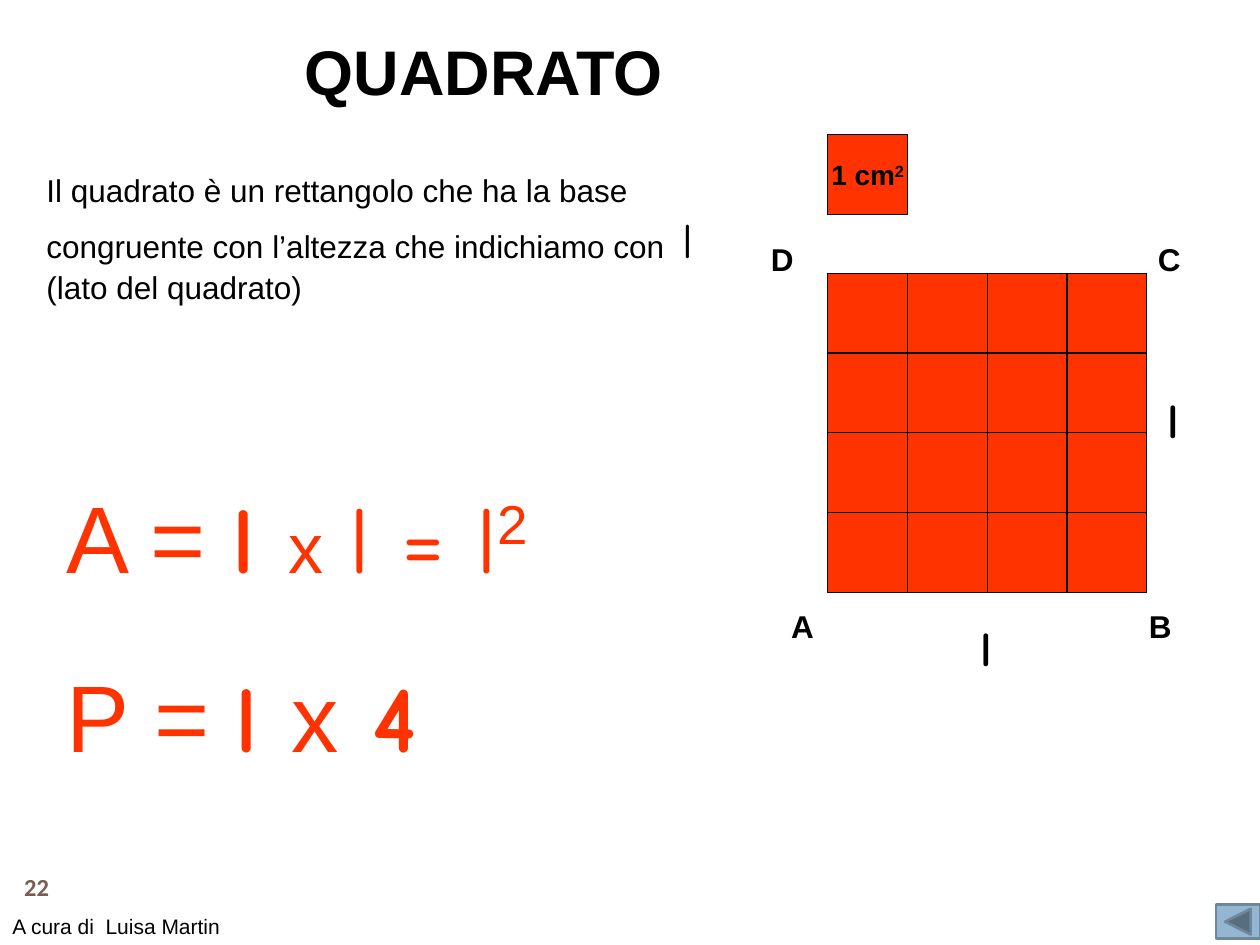
import dataclasses

import pptx
import pptx.dml.color
import pptx.enum.shapes
import pptx.enum.text
import pptx.oxml
import pptx.util
from pptx.util import Inches

SHAPE = pptx.enum.shapes.MSO_SHAPE
ANCHOR = pptx.enum.text.MSO_ANCHOR
ALIGN = pptx.enum.text.PP_ALIGN


@dataclasses.dataclass(frozen=True)
class Theme:
    black: str = "000000"
    red: str = "FF3300"
    brown: str = "775F55"
    button: str = "94B6D2"
    button_edge: str = "6D879B"
    sans: str = "Arial"
    script: str = "Comic Neue"
    number_font: str = "Calibri"
    title: int = 36
    formula: int = 54
    operator: int = 40
    side: int = 28
    body: int = 18
    unit: int = 16
    number: int = 14
    credit: int = 12


class SlideBuilder:
    def __init__(self, slide, theme):
        self.slide = slide
        self.theme = theme

    def run(self, paragraph, text, size, color, font=None, bold=False, raised=False):
        run = paragraph.add_run()
        run.text = text
        run.font.size = pptx.util.Pt(size)
        run.font.name = font or self.theme.sans
        run.font.bold = bold
        run.font.color.rgb = pptx.dml.color.RGBColor.from_string(color)
        if raised:
            run.font._element.set("baseline", "30000")

    def text(self, left, top, width, height, color, runs):
        """Add a text box; each run is (text, size, further run options)."""
        box = self.slide.shapes.add_textbox(
            Inches(left), Inches(top), Inches(width), Inches(height))
        frame = box.text_frame
        frame.word_wrap = True
        paragraph = frame.paragraphs[0]
        self.space_before_half(paragraph)
        for text, size, options in runs:
            self.run(paragraph, text, size, color, **options)
        return frame

    def space_before_half(self, paragraph):
        """Set spacing relative to the line, which python-pptx only offers in points."""
        paragraph.space_before = pptx.util.Pt(0)
        spacing = paragraph._p.pPr.find(pptx.oxml.ns.qn("a:spcBef"))
        spacing.remove(spacing[0])
        spacing.append(pptx.oxml.parse_xml(
            '<a:spcPct xmlns:a="http://schemas.openxmlformats.org/drawingml/2006/main"'
            ' val="50000"/>'))

    def shape(self, kind, left, top, width, height, fill, line, line_width):
        shape = self.slide.shapes.add_shape(
            kind, Inches(left), Inches(top), Inches(width), Inches(height))
        shape.shadow.inherit = False
        shape.fill.solid()
        shape.fill.fore_color.rgb = pptx.dml.color.RGBColor.from_string(fill)
        shape.line.color.rgb = pptx.dml.color.RGBColor.from_string(line)
        shape.line.width = pptx.util.Pt(line_width)
        return shape

    def unit_square(self, left, top, side):
        return self.shape(SHAPE.RECTANGLE, left, top, side, side,
                          self.theme.red, self.theme.black, 0.75)


def build_square(builder):
    theme = builder.theme
    left, top, count = 6.57, 2.17, 4
    unit = 2.53 / count

    sample = builder.unit_square(left, 1.07, unit)
    frame = sample.text_frame
    frame.word_wrap = False
    frame.vertical_anchor = ANCHOR.MIDDLE
    paragraph = frame.paragraphs[0]
    paragraph.alignment = ALIGN.CENTER
    builder.run(paragraph, "1 cm", theme.unit, theme.black, bold=True)
    builder.run(paragraph, "2", theme.unit, theme.black, bold=True, raised=True)

    for row in range(count):
        for column in range(count):
            builder.unit_square(left + column * unit, top + row * unit, unit)

    for vertex, x, y in (("A", 6.18, 4.77), ("B", 9.02, 4.77),
                         ("C", 9.09, 1.86), ("D", 6.02, 1.86)):
        builder.text(x, y, 0.39, 0.4, theme.black,
                     [(vertex, theme.body, {"bold": True})])
    for x, y in ((9.17, 3.04), (7.68, 4.85)):
        builder.text(x, y, 0.39, 0.57, theme.black,
                     [("l", theme.side, {"font": theme.script, "bold": True})])


def build_texts(builder):
    theme = builder.theme
    script = {"font": theme.script}
    bold_script = {"font": theme.script, "bold": True}

    builder.text(2.32, 0.21, 3.23, 0.71, theme.black,
                 [("QUADRATO", theme.title, {"bold": True})])
    builder.text(0.27, 1.31, 5.59, 1.17, theme.black, [
        ("Il quadrato è un rettangolo che ha la base congruente con "
         "l’altezza che indichiamo con  ", theme.body, {}),
        ("l  ", theme.side, script),
        (" (lato del quadrato)", theme.body, {})])
    builder.text(0.43, 3.75, 4.49, 1, theme.red, [
        ("A = ", theme.formula, {}),
        ("l ", theme.formula, bold_script),
        ("x", theme.operator, {}),
        (" ", theme.formula, {}),
        ("l = l", theme.formula, script),
        ("2", theme.formula, {"raised": True})])
    builder.text(0.43, 5.17, 3.7, 1.01, theme.red, [
        ("P = ", theme.formula, {}),
        ("l ", theme.formula, bold_script),
        ("x", theme.formula, {}),
        (" 4", theme.formula, bold_script)])


def build_footer(builder):
    theme = builder.theme
    number = builder.text(0, 6.83, 0.58, 0.42, theme.brown, [
        ("22", theme.number, {"font": theme.number_font, "bold": True})])
    number.vertical_anchor = ANCHOR.MIDDLE
    number.paragraphs[0].alignment = ALIGN.CENTER
    number.paragraphs[0].space_before = pptx.util.Pt(0)
    builder.text(0, 7.2, 1.89, 0.3, theme.black,
                 [("A cura di  Luisa Martin", theme.credit, {})])
    builder.shape(SHAPE.ACTION_BUTTON_BACK_OR_PREVIOUS, 9.65, 7.18, 0.35, 0.27,
                  theme.button, theme.button_edge, 1.5)


def main():
    presentation = pptx.Presentation()
    presentation.slide_width = Inches(10)
    presentation.slide_height = Inches(7.5)
    slide = presentation.slides.add_slide(presentation.slide_layouts[6])
    builder = SlideBuilder(slide, Theme())
    build_square(builder)
    build_texts(builder)
    build_footer(builder)
    presentation.save("out.pptx")


if __name__ == "__main__":
    main()
